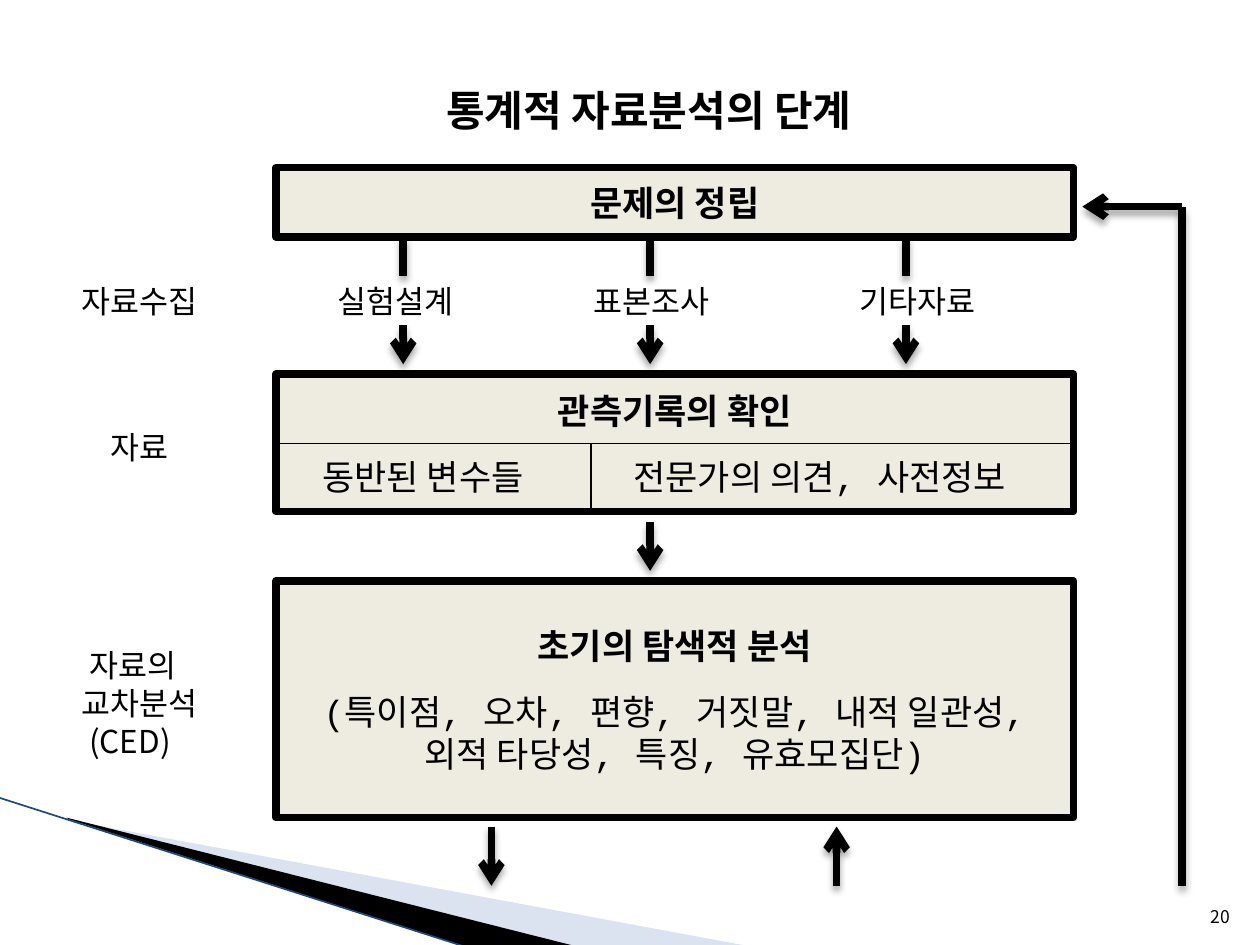
from lxml.etree import SubElement
from pptx import Presentation
from pptx.dml.color import RGBColor
from pptx.enum.shapes import MSO_CONNECTOR as CONN, MSO_SHAPE as SHAPE
from pptx.enum.text import MSO_ANCHOR as ANCHOR, MSO_AUTO_SIZE as AUTO, PP_ALIGN as ALIGN
from pptx.oxml.ns import qn
from pptx.util import Pt

PX = 9144  # one px is a hundredth of an inch
BLACK = RGBColor(0x00, 0x00, 0x00)
CREAM = RGBColor(0xEE, 0xEC, 0xE1)
PALE = RGBColor(0xA7, 0xB9, 0xDB)
EDGE = RGBColor(0x1F, 0x49, 0x7D)
SANS, MONO, CJK = "Arial", "Courier New", "Noto Sans CJK KR"
THICK, THIN = 4.33, 0.75
BOX_LEFT, BOX_WIDTH = 219, 633


def px(*values):
    return [v * PX for v in values]


def style(p, size, font, bold=False, align=ALIGN.LEFT):
    p.alignment = align
    f = p.font
    f.size, f.name, f.bold = Pt(size), font, bold
    f.color.rgb = BLACK


def label(s, at, lines, font=SANS, size=18, align=ALIGN.LEFT, anchor=ANCHOR.TOP):
    tf = s.shapes.add_textbox(*px(*at)).text_frame
    tf.word_wrap = True
    tf.vertical_anchor = anchor
    tf.text = "\n".join(lines)
    for p in tf.paragraphs:
        style(p, size, font, align=align)
    return tf


def stage(s, top, height, heading, details=()):
    """Framed box with a bold heading and lighter detail lines."""
    sp = s.shapes.add_shape(SHAPE.RECTANGLE, *px(BOX_LEFT, top, BOX_WIDTH, height))
    sp.shadow.inherit = False
    sp.fill.solid()
    sp.fill.fore_color.rgb = CREAM
    sp.line.color.rgb = BLACK
    sp.line.width = Pt(THICK)
    tf = sp.text_frame
    tf.word_wrap = True
    tf.vertical_anchor = ANCHOR.MIDDLE
    tf.text = "\n".join([heading, *details])
    for i, p in enumerate(tf.paragraphs):
        style(p, 20, MONO, bold=i == 0, align=ALIGN.CENTER)
    if details:
        tf.paragraphs[1].space_before = Pt(14)
    return tf


def line(s, start, end, width=THICK, color=BLACK, arrow=False):
    c = s.shapes.add_connector(CONN.STRAIGHT, *px(*start, *end))
    c.line.color.rgb = color
    c.line.width = Pt(width)
    if arrow:
        SubElement(c.line._get_or_add_ln(), qn("a:tailEnd"), type="arrow")
    effects = SubElement(c._element.spPr, qn("a:effectLst"))
    if width == THICK:
        shadow = SubElement(effects, qn("a:outerShdw"), blurRad=str(Pt(4)),
                            dist=str(Pt(3)), dir="5400000", rotWithShape="0")
        rgb = SubElement(shadow, qn("a:srgbClr"), val=str(BLACK))
        SubElement(rgb, qn("a:alpha"), val="35000")


def wedge(s, points, color, alpha=100):
    fb = s.shapes.build_freeform(*points[0], scale=PX)
    fb.add_line_segments(points[1:], close=True)
    sp = fb.convert_to_shape()
    sp.shadow.inherit = False
    sp.fill.solid()
    sp.fill.fore_color.rgb = color
    sp.line.fill.background()
    if alpha < 100:
        rgb = sp._element.spPr.find(qn("a:solidFill"))[0]
        SubElement(rgb, qn("a:alpha"), val=str(alpha * 1000))


def title(s, text):
    sp = s.shapes.title
    sp.left, sp.top, sp.width, sp.height = px(344, 62, 391, 51)
    tf = sp.text_frame
    tf.text = text
    tf.word_wrap = True
    tf.auto_size = AUTO.SHAPE_TO_FIT_TEXT
    tf.vertical_anchor = ANCHOR.TOP
    style(tf.paragraphs[0], 24, SANS, bold=True)


def main():
    prs = Presentation()
    prs.slide_width, prs.slide_height = px(1000, 750)
    s = prs.slides.add_slide(prs.slide_layouts[5])

    # Corner decoration
    wedge(s, [(55, 651), (595, 751), (456, 751), (55, 650)], PALE, alpha=40)
    wedge(s, [(53, 649), (457, 751), (372, 752), (54, 650)], BLACK)
    line(s, (-1, 633), (371, 752), width=0.95, color=EDGE)

    title(s, "통계적 자료분석의 단계")

    # Stages of the analysis
    stage(s, 133, 55, "문제의 정립")
    record = stage(s, 297, 109, "관측기록의 확인")
    record.vertical_anchor = ANCHOR.TOP
    record.margin_top = 12 * PX
    explore = stage(s, 461, 188, "초기의 탐색적 분석",
                    ["(특이점, 오차, 편향, 거짓말, 내적 일관성,", "외적 타당성, 특징, 유효모집단)"])
    explore.margin_left = explore.margin_right = 20 * PX

    # Two cells of the record box
    for left, width, text in [(246, 220, "동반된 변수들"),
                              (493, 350, "전문가의 의견, 사전정보")]:
        label(s, (left, 357, width, 43), [text], font=MONO, size=20, anchor=ANCHOR.MIDDLE)
    line(s, (BOX_LEFT, 352), (BOX_LEFT + BOX_WIDTH, 352), width=THIN)
    line(s, (469, 352), (469, 406), width=THIN)

    # Sources of data, each with a line in and an arrow out
    for x, left, width, text in [(320, 258, 156, "실험설계"),
                                 (516, 461, 148, "표본조사"),
                                 (719, 672, 133, "기타자료")]:
        label(s, (left, 219, width, 40), [text])
        line(s, (x, 188), (x, 219))
        line(s, (x, 258), (x, 289), arrow=True)

    # Side labels
    label(s, (55, 219, 141, 40), ["자료수집"])
    label(s, (78, 335, 70, 40), ["자료"])
    cross = label(s, (55, 508, 125, 101), ["자료의", "교차분석", "(CED)"], font=CJK)
    for p in cross.paragraphs[::2]:
        p._p.get_or_add_pPr().set("marL", str(6 * PX))

    # Flow between stages and the feedback loop
    line(s, (516, 414), (516, 453), arrow=True)
    line(s, (390, 656), (390, 703), arrow=True)
    line(s, (664, 703), (664, 656), arrow=True)
    line(s, (938, 703), (938, 164))
    line(s, (938, 164), (859, 164), arrow=True)

    # Slide number
    label(s, (946, 701, 40, 40), ["20"], font=CJK, size=10,
          align=ALIGN.RIGHT, anchor=ANCHOR.BOTTOM)

    prs.save("out.pptx")


if __name__ == "__main__":
    main()
